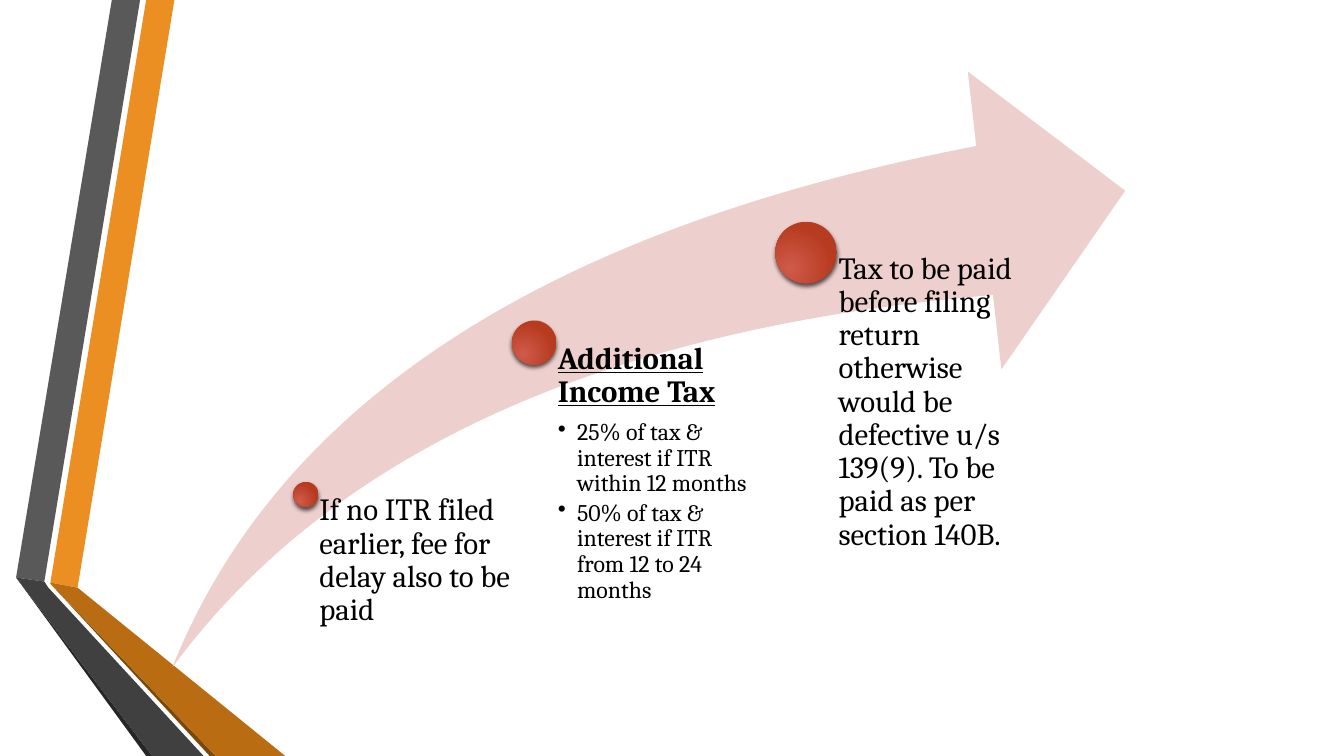
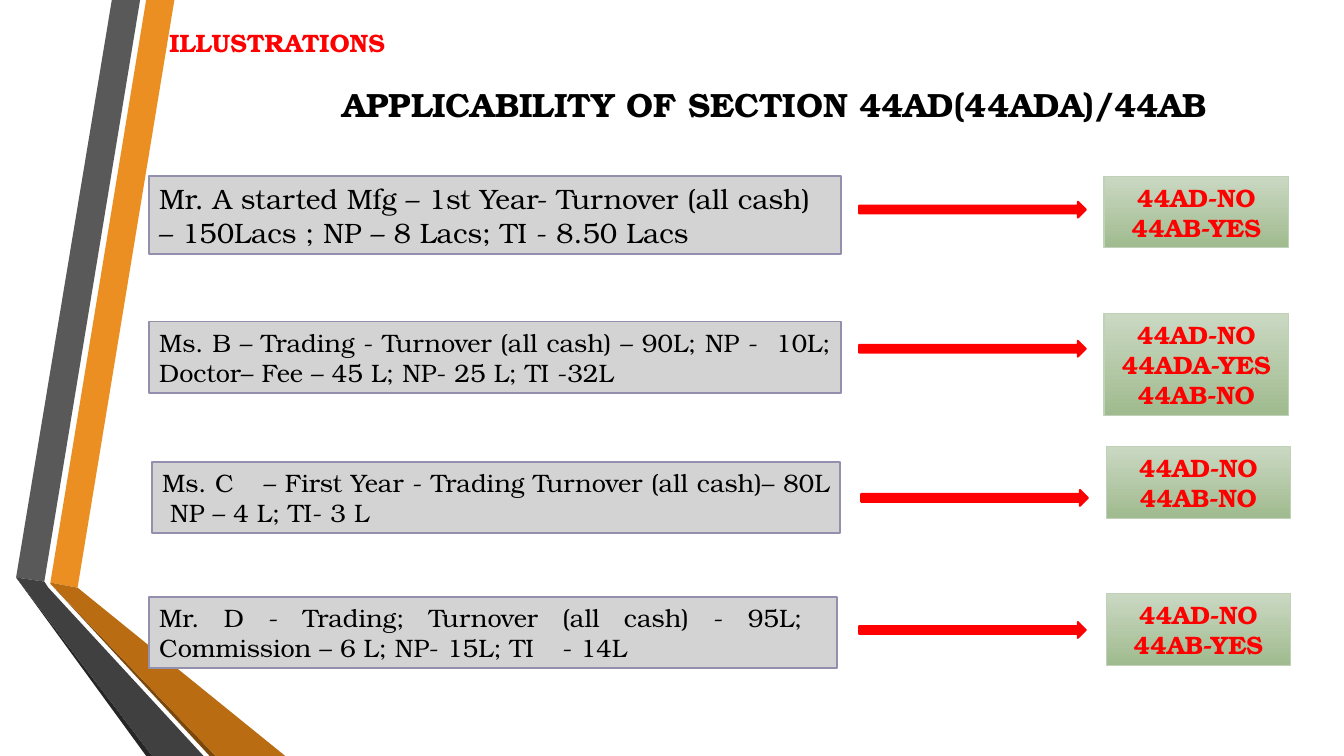
from pptx import Presentation
from pptx.dml.color import RGBColor
from pptx.enum.shapes import MSO_SHAPE as SHAPE
from pptx.enum.text import MSO_ANCHOR as ANCHOR, PP_ALIGN as ALIGN
from pptx.oxml import parse_xml
from pptx.oxml.ns import nsdecls, qn
from pptx.util import Inches, Pt


class Theme:
    serif, bookman = "Cambria", "TeX Gyre Bonum"
    black, red = "000000", "FF0000"
    swoosh = "EDCFCD"
    dot = ("D05A4A", "B63B1F")
    case, case_line = "D3D3D3", "9390AF"
    verdict, verdict_line = ("CAD8C2", "A0BB8F"), "C1D1B8"
    title, lead, case_big, body, bullet = 24, 22, 20, 18, 17
    thick, thin = 1.25, 0.75


BANDS = [
    ("EB8F22", [(0.5, 5.78), (0.77, 5.83), (1.73, 0), (1.45, 0)]),
    ("595959", [(1.39, 0), (1.11, 0), (0.16, 5.73), (0.44, 5.77)]),
    ("262626", [(0.16, 5.73), (1.45, 7.5), (1.51, 7.5)]),
    ("7B480B", [(0.5, 5.79), (2.08, 7.5), (2.14, 7.5)]),
    ("B96C11", [(0.5, 5.79), (2.14, 7.5), (2.83, 7.5), (0.77, 5.83), (0.5, 5.78)]),
    ("404040", [(2.02, 7.5), (0.48, 5.83), (0.44, 5.77), (0.16, 5.73), (1.51, 7.5)]),
]

SWOOSH = (1.71, 0.71, 9.45, 5.91)
STEPS = [
    dict(left=2.91, top=4.78, size=0.25, width=2.2, bullets=[],
         lead="If no ITR filed earlier, fee for delay also to be paid"),
    dict(left=5.08, top=3.18, size=0.44, width=2.27, heading=True,
         lead="Additional Income Tax",
         bullets=["25% of tax & interest if ITR within 12 months",
                  "50% of tax & interest if ITR from 12 to 24 months"]),
    dict(left=7.69, top=2.2, size=0.61, width=2.27, bullets=[],
         lead="Tax to be paid before filing return otherwise would be  defective u/s "
              "139(9). To be paid as per section 140B."),
]

HEADINGS = [
    ("APPLICABILITY OF SECTION 44AD(44ADA)/44AB", (2.31, 0.78, 10.75, 0.5),
     Theme.title, Theme.black),
    ("ILLUSTRATIONS", (1.48, 0.22, 2.54, 0.4), Theme.body, Theme.red),
]
CASES = [
    dict(text=["Mr. A started Mfg – 1st Year- Turnover (all cash)",
               "– 150Lacs ; NP – 8 Lacs; TI - 8.50 Lacs"],
         box=(1.48, 1.75, 6.86, 0.77), size=Theme.case_big, align=ALIGN.LEFT,
         arrow=(8.52, 2), verdict=(10.95, 1.75), results=["44AD-NO", "44AB-YES"]),
    dict(text=["Ms. B – Trading - Turnover (all cash) – 90L; NP -  10L; "
               "Doctor– Fee – 45 L; NP- 25 L; TI -32L"],
         box=(1.48, 3.19, 6.86, 0.71), arrow=(8.52, 3.38), verdict=(10.95, 3.11),
         results=["44AD-NO", "44ADA-YES", "44AB-NO"]),
    dict(text=["Ms. C\t– First Year - Trading Turnover (all cash)– "
               "80L  NP – 4 L; TI- 3 L"],
         box=(1.51, 4.58, 6.82, 0.71), arrow=(8.54, 4.86), verdict=(10.97, 4.43),
         results=["44AD-NO", "44AB-NO"]),
    dict(text=["Mr. D - Trading; Turnover (all cash) - 95L;  "
               "Commission – 6 L; NP- 15L; TI\t- 14L"],
         box=(1.48, 5.92, 6.82, 0.71), arrow=(8.52, 6.17), verdict=(10.97, 5.89),
         results=["44AD-NO", "44AB-YES"]),
]
ARROW_SIZE = (2.25, 0.16)
VERDICT_WIDTH, VERDICT_PADDING, VERDICT_LINE = 1.83, 0.11, 0.3


def write(tf, text, size=Theme.body, font=Theme.bookman, color=Theme.black, bold=False,
          underline=False, align=None, spacing=None, after=None, bullet=None):
    p = tf.add_paragraph() if tf.text else tf.paragraphs[0]
    p.alignment, p.line_spacing = align, spacing
    if after is not None:
        p.space_after = Pt(after)
    if bullet:
        p.level = 1
        pPr = p._p.get_or_add_pPr()
        pPr.set("marL", str(Inches(0.19)))
        pPr.set("indent", str(-Inches(0.19)))
        pPr.append(parse_xml(f'<a:buChar {nsdecls("a")} char="{bullet}"/>'))
    r = p.add_run()
    r.text = text
    r.font.size, r.font.name = Pt(size), font
    r.font.bold, r.font.underline = bold, underline
    r.font.color.rgb = RGBColor.from_string(color)


def paint(sp, fill, line=None, width=Theme.thick):
    sp.shadow.inherit = False
    if isinstance(fill, tuple):
        sp.fill.gradient()
        sp.fill.gradient_angle = 270
        for stop, color in zip(sp.fill.gradient_stops, fill):
            stop.color.rgb = RGBColor.from_string(color)
    else:
        sp.fill.solid()
        sp.fill.fore_color.rgb = RGBColor.from_string(fill)
    if line:
        sp.line.color.rgb = RGBColor.from_string(line)
        sp.line.width = Pt(width)
    else:
        sp.line.fill.background()


def add_shape(s, kind, box, fill, line=None, width=Theme.thick):
    sp = s.shapes.add_shape(kind, *map(Inches, box))
    paint(sp, fill, line, width)
    sp.text_frame.word_wrap = True
    return sp


def add_text(s, box):
    tf = s.shapes.add_textbox(*map(Inches, box)).text_frame
    tf.word_wrap = True
    return tf


def add_bands(s, layout):
    for color, points in BANDS:
        start, *rest = [(Inches(x), Inches(y)) for x, y in points]
        builder = s.shapes.build_freeform(*start)
        builder.add_line_segments(rest, close=True)
        sp = builder.convert_to_shape()
        paint(sp, color)
        layout.shapes.element.append(sp.element)


def add_dot(s, left, top, size):
    sp = add_shape(s, SHAPE.OVAL, (left, top, size, size), Theme.dot)
    spPr = sp.element.spPr
    grad = spPr.find(qn("a:gradFill"))
    grad.replace(grad.find(qn("a:lin")), parse_xml(
        f'<a:path {nsdecls("a")} path="circle">'
        '<a:fillToRect l="50000" t="100000" r="100000" b="50000"/></a:path>'))
    spPr.find(qn("a:effectLst")).append(parse_xml(
        f'<a:outerShdw {nsdecls("a")} blurRad="{Pt(3)}" dist="{Pt(2)}" dir="5400000" '
        'rotWithShape="0"><a:srgbClr val="000000"><a:alpha val="64000"/></a:srgbClr>'
        '</a:outerShdw>'))


def build_steps(s):
    sp = add_shape(s, SHAPE.SWOOSH_ARROW, SWOOSH, Theme.swoosh)
    sp.adjustments[0] = sp.adjustments[1] = 0.25
    bottom = SWOOSH[1] + SWOOSH[3]
    for step in STEPS:
        left, top, size = step["left"], step["top"], step["size"]
        add_dot(s, left, top, size)
        x, y = left + size / 2, top + size / 2
        tf = add_text(s, (x, y, step["width"], bottom - y))
        tf.margin_left = Inches(0.53 * size)
        tf.margin_top = tf.margin_right = tf.margin_bottom = 0
        heading = step.get("heading", False)
        write(tf, step["lead"], size=Theme.lead, font=Theme.serif, bold=heading,
              underline=heading, spacing=0.9, after=0.35 * Theme.lead)
        for text in step["bullets"]:
            write(tf, text, size=Theme.bullet, font=Theme.serif, spacing=0.9,
                  after=0.15 * Theme.bullet, bullet="•")


def build_cases(s):
    for text, box, size, color in HEADINGS:
        write(add_text(s, box), text, size=size, color=color, bold=True, align=ALIGN.CENTER)
    for case in CASES:
        sp = add_shape(s, SHAPE.RECTANGLE, case["box"], Theme.case, Theme.case_line)
        sp.text_frame.vertical_anchor = ANCHOR.MIDDLE
        for text in case["text"]:
            write(sp.text_frame, text, size=case.get("size", Theme.body),
                  align=case.get("align", ALIGN.JUSTIFY))
        add_shape(s, SHAPE.RIGHT_ARROW, case["arrow"] + ARROW_SIZE, Theme.red, Theme.red)
        height = VERDICT_PADDING + VERDICT_LINE * len(case["results"])
        sp = add_shape(s, SHAPE.RECTANGLE, case["verdict"] + (VERDICT_WIDTH, height),
                       Theme.verdict, Theme.verdict_line, Theme.thin)
        for text in case["results"]:
            write(sp.text_frame, text, color=Theme.red, bold=True, align=ALIGN.CENTER)


def main():
    prs = Presentation()
    prs.slide_width, prs.slide_height = Inches(13.33), Inches(7.5)
    blank = prs.slide_layouts[6]
    steps, cases = [prs.slides.add_slide(blank) for _ in range(2)]
    add_bands(steps, blank)
    build_steps(steps)
    build_cases(cases)
    prs.save("out.pptx")


if __name__ == "__main__":
    main()
